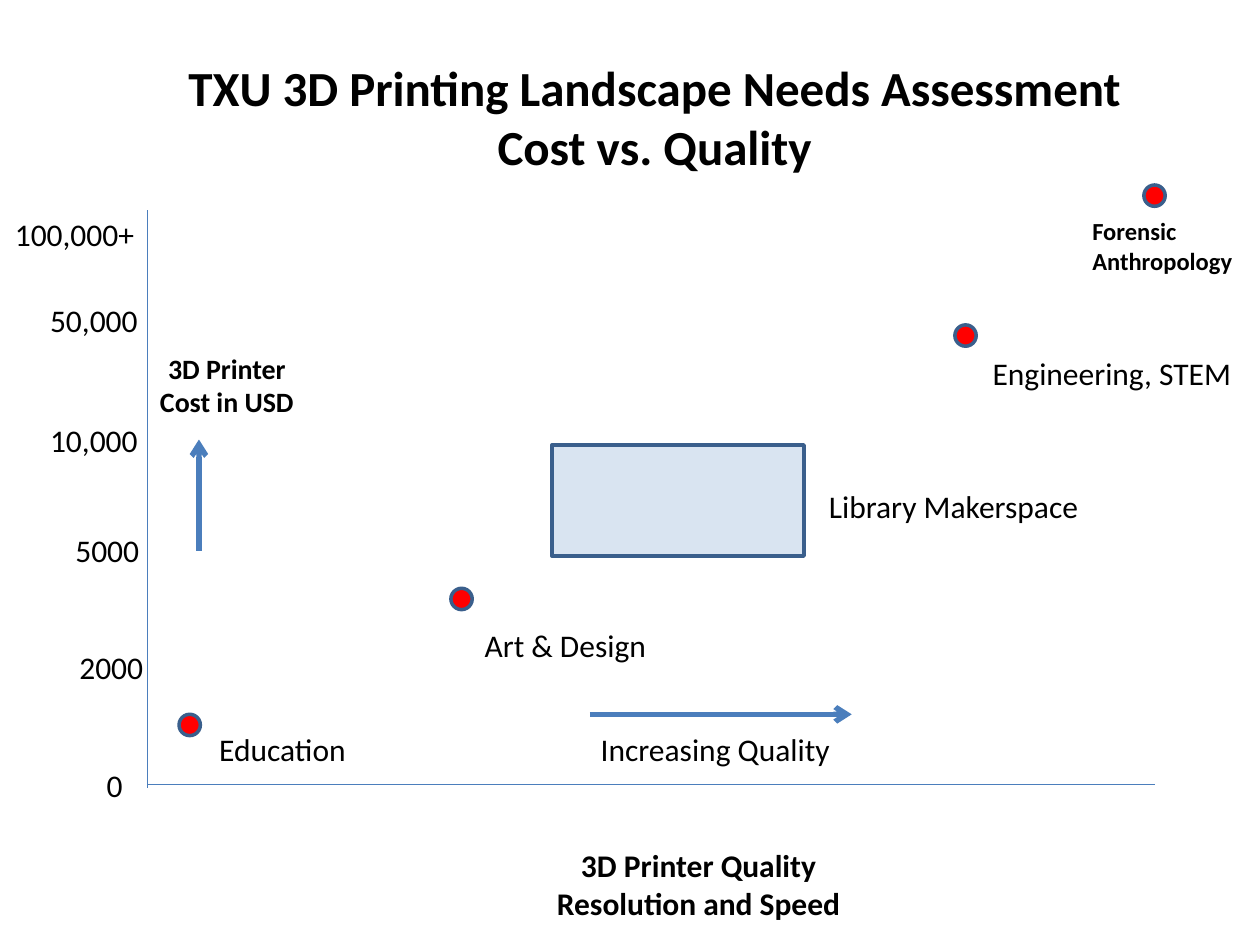
import pptx
import pptx.util
import pptx.dml.color
import pptx.enum.shapes
import pptx.enum.text
import pptx.oxml.ns
from lxml import etree

Cm = pptx.util.Cm
SHAPE = pptx.enum.shapes.MSO_SHAPE
ALIGN = pptx.enum.text.PP_ALIGN
AUTO = pptx.enum.text.MSO_AUTO_SIZE
qn = pptx.oxml.ns.qn

AXIS_LEFT, AXIS_BASE = 2.97, 15.82
DOT_SIZE = 0.43
LINE_HEIGHT = 1.02

COST_TICKS = [
    ("100,000+", 0.05, 4.22, 2.95),
    ("50,000", 0.76, 5.94, 2.54),
    ("10,000", 0.76, 8.36, 2.54),
    ("5000", 1.27, 10.59, 2.54),
    ("2000", 1.35, 12.93, 2.54),
    ("0", 1.9, 15.32, 1.07),
]
NEED_LABELS = [
    ("Increasing Quality", 11.86, 14.6, 5.18),
    ("Education", 4.17, 14.6, 3.1),
    ("Art & Design", 9.52, 12.5, 3.81),
    ("Library Makerspace", 16.46, 9.7, 5.59),
    ("Engineering, STEM", 19.76, 7.01, 5.38),
]
BOLD_LABELS = [
    ("3D Printer\vCost in USD", 2.95, 6.96, 3.25, 1.63, 16, ALIGN.CENTER),
    ("3D Printer Quality\vResolution and Speed", 10.95, 16.94, 6.27, 1.8, 18, ALIGN.CENTER),
    ("Forensic\vAnthropology", 21.77, 4.24, 3.35, 1.45, 14, ALIGN.LEFT),
]
DOTS = [(3.61, 14.4), (9.09, 11.86), (23.06, 3.73), (19.25, 6.55)]


def rgb(color):
    return pptx.dml.color.RGBColor.from_string(color)


def set_text(tf, text, size, bold=False, align=ALIGN.LEFT):
    tf.text = text
    for p in tf.paragraphs:
        p.alignment = align
        for r in p.runs:
            r.font.name = "Calibri"
            r.font.size = pptx.util.Pt(size)
            r.font.bold = bold
            r.font.color.rgb = rgb("000000")


def add_title(s, text):
    sp = s.shapes.title
    sp.left, sp.top, sp.width, sp.height = Cm(1.27), Cm(0.76), Cm(23.85), Cm(3.18)
    tf = sp.text_frame
    tf.auto_size = AUTO.NONE
    tf.vertical_anchor = pptx.enum.text.MSO_ANCHOR.MIDDLE
    set_text(tf, text, 28, True, ALIGN.CENTER)


def add_label(s, text, x, y, w, h=LINE_HEIGHT, size=18, align=ALIGN.LEFT, bold=False, wrap=False):
    tf = s.shapes.add_textbox(Cm(x), Cm(y), Cm(w), Cm(h)).text_frame
    tf.word_wrap = wrap
    tf.auto_size = AUTO.SHAPE_TO_FIT_TEXT
    set_text(tf, text, size, bold, align)


def add_filled(s, kind, x, y, w, h, color, alpha=None):
    sp = s.shapes.add_shape(kind, Cm(x), Cm(y), Cm(w), Cm(h))
    sp.shadow.inherit = False
    sp.fill.solid()
    sp.fill.fore_color.rgb = rgb(color)
    sp.line.color.rgb = rgb("3A5F8C")
    sp.line.width = pptx.util.Pt(2)
    if alpha is not None:
        clr = sp.fill._xPr.find(qn("a:solidFill"))[0]
        etree.SubElement(clr, qn("a:alpha"), val=str(alpha * 1000))


def add_line(s, x1, y1, x2, y2, width=0.75, arrow=False):
    line = s.shapes.add_connector(
        pptx.enum.shapes.MSO_CONNECTOR.STRAIGHT, Cm(x1), Cm(y1), Cm(x2), Cm(y2))
    line.line.color.rgb = rgb("4B7EBC")
    line.line.width = pptx.util.Pt(width)
    if arrow:
        etree.SubElement(line.line._get_or_add_ln(), qn("a:tailEnd"), type="arrow")
    etree.SubElement(line._element.spPr, qn("a:effectLst"))


def main():
    prs = pptx.Presentation()
    prs.slide_width, prs.slide_height = Cm(25.4), Cm(19.05)
    s = prs.slides.add_slide(prs.slide_layouts[5])

    add_filled(s, SHAPE.RECTANGLE, 11.13, 8.97, 5.08, 2.24, "4F81BD", alpha=21)
    add_title(s, "TXU 3D Printing Landscape Needs Assessment\vCost vs. Quality")
    add_line(s, AXIS_LEFT, 4.24, AXIS_LEFT, 15.88)
    add_line(s, AXIS_LEFT, AXIS_BASE, 23.29, AXIS_BASE)

    for tick in COST_TICKS:
        add_label(s, *tick, wrap=True)
    for x, y in DOTS:
        add_filled(s, SHAPE.OVAL, x, y, DOT_SIZE, DOT_SIZE, "FF0000")
    for label in NEED_LABELS:
        add_label(s, *label)
    for label in BOLD_LABELS:
        add_label(s, *label, bold=True)

    add_line(s, 11.89, 14.4, 17.17, 14.4, 3, arrow=True)
    add_line(s, 4.01, 11.1, 4.01, 8.86, 3, arrow=True)
    prs.save("out.pptx")


if __name__ == "__main__":
    main()
